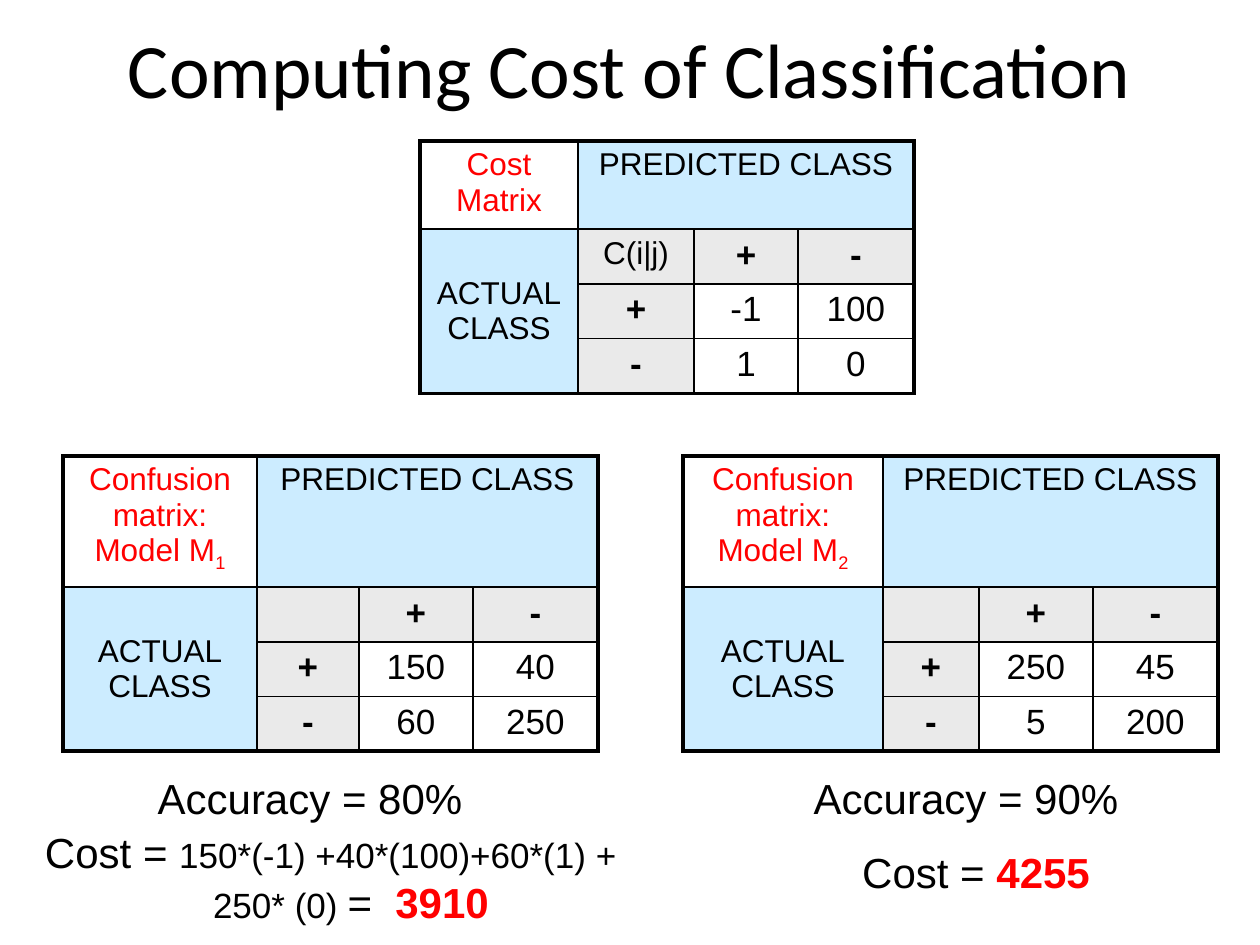
import pptx
import pptx.util
import pptx.dml.color
import pptx.enum.text
import pptx.oxml
import pptx.oxml.ns

THEME = {
    "black": "000000", "red": "FF0000", "blue": "CCECFF", "grey": "EAEAEA",
    "head": "Calibri", "body": "Arial",
    "title": 44, "large": 24, "mid": 20, "small": 18,
    "thick": 2.25, "thin": 1,
}
SCALE = 914400 / 126
PAGE = (1260, 945)

TITLE = "Computing Cost of Classification"
TABLES = [
    {"at": (420, 141), "cols": (158, 116, 104, 116), "rows": (83, 52, 52, 54),
     "name": [("Cost Matrix", {})], "key": "C(i|j)",
     "vals": [("-1", "100"), ("1", "0")]},
    {"at": (63, 456), "cols": (194, 102, 114, 125), "rows": (123, 52, 52, 54),
     "name": [("Confusion matrix: Model M", {}), ("1", {"base": -25000})], "key": "",
     "vals": [("150", "40"), ("60", "250")]},
    {"at": (683, 456), "cols": (200, 96, 114, 125), "rows": (123, 52, 52, 54),
     "name": [("Confusion matrix: Model M", {}), ("2", {"base": -25000})], "key": "",
     "vals": [("250", "45"), ("5", "200")]},
]
RESULT = {"color": "red", "bold": True}
NOTES = [
    ((0, 766, 620, 63), [("Accuracy = 80%", {})]),
    ((756, 766, 420, 73), [("Accuracy = 90%", {})]),
    ((21, 820, 620, 115), [("Cost = ", {}),
                           ("150*(-1) +40*(100)+60*(1) + 250* (0) ", {"size": "mid"}),
                           ("=  ", {}), ("3910", RESULT)]),
    ((766, 840, 420, 73), [("Cost = ", {}), ("4255", RESULT)]),
]


def px(n):
    return pptx.util.Emu(round(n * SCALE))


def rgb(name):
    return pptx.dml.color.RGBColor.from_string(THEME[name])


def write(frame, runs, size="small", font="body", color="black", bold=False,
          before=2, after=4, hang=0):
    para = frame.paragraphs[0]
    para.alignment = pptx.enum.text.PP_ALIGN.CENTER
    para.space_before = pptx.util.Pt(before)
    para.space_after = pptx.util.Pt(after)
    if hang:
        props = para._p.get_or_add_pPr()
        props.set("marL", str(px(hang)))
        props.set("indent", str(-px(hang)))
    for text, form in runs:
        for i, line in enumerate(text.split("\n")):
            if i:
                para.add_line_break()
            run = para.add_run()
            run.text = line
            run.font.name = THEME[font]
            run.font.size = pptx.util.Pt(THEME[form.get("size", size)])
            run.font.bold = form.get("bold", bold)
            run.font.color.rgb = rgb(form.get("color", color))
            if "base" in form:
                run._r.get_or_add_rPr().set("baseline", str(form["base"]))


def label(slide, box, runs, **form):
    shape = slide.shapes.add_textbox(*map(px, box))
    shape.text_frame.word_wrap = True
    shape.text_frame.vertical_anchor = form.pop("anchor", pptx.enum.text.MSO_ANCHOR.TOP)
    write(shape.text_frame, runs, **form)


def border(cell, outer):
    props = cell._tc.get_or_add_tcPr()
    for side, thick in zip("LRTB", outer):
        width = pptx.util.Pt(THEME["thick" if thick else "thin"])
        props.append(pptx.oxml.parse_xml(
            f'<a:ln{side} {pptx.oxml.ns.nsdecls("a")} w="{width}"><a:solidFill>'
            f'<a:srgbClr val="{THEME["black"]}"/></a:solidFill></a:ln{side}>'))


def matrix(slide, data):
    cols, rows = data["cols"], data["rows"]
    frame = slide.shapes.add_table(len(rows), len(cols), *map(
        px, (*data["at"], sum(cols), sum(rows))))
    grid = frame.table
    grid.first_row = grid.horz_banding = False
    for col, wide in zip(grid.columns, cols):
        col.width = px(wide)
    for row, high in zip(grid.rows, rows):
        row.height = px(high)
    grid.cell(0, 1).merge(grid.cell(0, 3))
    grid.cell(1, 0).merge(grid.cell(3, 0))

    sign = {"size": "mid", "bold": True}
    cells = {
        (0, 0): (data["name"], {"color": "red"}),
        (0, 1): ([("PREDICTED CLASS", {})], {}),
        (1, 0): ([("ACTUAL\nCLASS", {})], {}),
    }
    if data["key"]:
        cells[1, 1] = ([(data["key"], {})], {})
    for i, mark in enumerate("+-"):
        cells[1, i + 2] = cells[i + 2, 1] = ([(mark, {})], sign)
        for j, val in enumerate(data["vals"][i]):
            cells[i + 2, j + 2] = ([(val, {})], {"size": "mid"})

    for r in range(len(rows)):
        for c in range(len(cols)):
            cell = grid.cell(r, c)
            high = cell.span_height if cell.is_merge_origin else 1
            wide = cell.span_width if cell.is_merge_origin else 1
            border(cell, (c == 0, c + wide == len(cols), r == 0, r + high == len(rows)))
            if (r == 0) != (c == 0):
                tint = "blue"
            else:
                tint = "grey" if r and c and 1 in (r, c) else None
            if tint:
                cell.fill.solid()
                cell.fill.fore_color.rgb = rgb(tint)
            else:
                cell.fill.background()
            if (r, c) in cells:
                runs, form = cells[r, c]
                write(cell.text_frame, runs, **form)
    grid.cell(1, 0).vertical_anchor = pptx.enum.text.MSO_ANCHOR.MIDDLE


def main():
    deck = pptx.Presentation()
    deck.slide_width, deck.slide_height = map(px, PAGE)
    slide = deck.slides.add_slide(deck.slide_layouts[6])
    label(slide, (63, 0, 1134, 136), [(TITLE, {})], size="title", font="head",
          before=0, after=0, anchor=pptx.enum.text.MSO_ANCHOR.MIDDLE)
    for data in TABLES:
        matrix(slide, data)
    for box, runs in NOTES:
        label(slide, box, runs, size="large", hang=40)
    deck.save("out.pptx")


if __name__ == "__main__":
    main()
